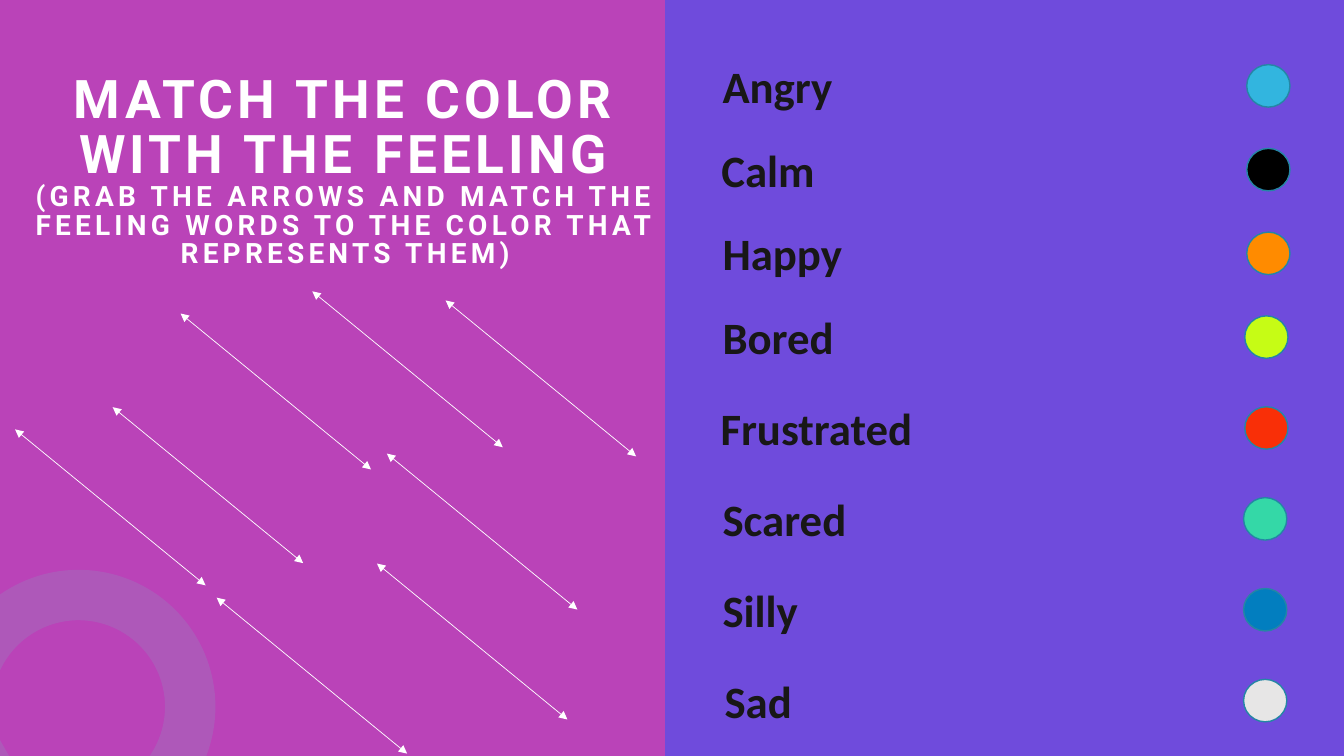
import math
from lxml import etree
from pptx import Presentation, util as u
from pptx.dml.color import RGBColor
from pptx.enum import shapes, text
from pptx.oxml.ns import qn

PURPLE = RGBColor(0x6F, 0x4B, 0xDC)
MAGENTA = RGBColor(0xCD, 0x41, 0xB0)
SKY = RGBColor(0x32, 0xB5, 0xDF)
TEAL = RGBColor(0x25, 0x86, 0xA5)
INK = RGBColor(0x18, 0x17, 0x17)
WHITE = RGBColor(0xFF, 0xFF, 0xFF)
BLACK = RGBColor(0x00, 0x00, 0x00)
ORANGE = RGBColor(0xFF, 0x8B, 0x00)
LIME = RGBColor(0xC6, 0xFC, 0x15)
RED = RGBColor(0xF9, 0x2F, 0x07)
MINT = RGBColor(0x34, 0xD8, 0xA7)
BLUE = RGBColor(0x02, 0x7E, 0xBF)
GREY = RGBColor(0xE7, 0xE6, 0xE6)

TITLE = [
    ("MATCH THE COLOR WITH THE FEELING", 38),
    ("(GRAB THE ARROWS AND MATCH THE FEELING WORDS TO THE COLOR THAT REPRESENTS THEM)", 20),
]
FEELINGS = [
    ("Angry", 17.96, 3.89, SKY, 31.42),
    ("Calm", 17.93, 3.33, BLACK, 31.42),
    ("Happy", 17.96, 4.17, ORANGE, 31.42),
    ("Bored", 17.96, 3.86, LIME, 31.37),
    ("Frustrated", 17.91, 6.15, RED, 31.37),
    ("Scared", 17.96, 4.27, MINT, 31.34),
    ("Silly", 17.96, 2.84, BLUE, 31.34),
    ("Sad", 18.01, 2.59, GREY, 31.34),
]
ARROW_STARTS = [
    (4.55, 7.9), (7.87, 7.34), (2.84, 10.26), (9.5, 14.2),
    (9.75, 11.43), (0.38, 10.82), (5.46, 15.06), (11.23, 7.57),
]
ARROW_RUN, ARROW_DROP = 4.8, 3.93
SLIDE_WIDTH, SLIDE_HEIGHT = 33.87, 19.05
PANEL_WIDTH = 16.76
FIRST_DOT, UPPER_PITCH, LOWER_PITCH, UPPER_STEPS = 1.63, 2.11, 2.29, 3
DOT_WIDTH, DOT_HEIGHT = 1.09, 1.07
LABEL_RISE, LABEL_HEIGHT = 0.28, 1.62
RING_X, RING_Y, RING_OUTER, RING_INNER = 1.98, 17.81, 3.45, 2.18


def visible_arc(radius, steps=60):
    start = math.pi + math.acos(RING_X / radius)
    end = 2 * math.pi + math.asin((SLIDE_HEIGHT - RING_Y) / radius)
    angles = [start + (end - start) * step / steps for step in range(steps + 1)]
    return [(u.Cm(RING_X + radius * math.cos(angle)),
             u.Cm(RING_Y + radius * math.sin(angle))) for angle in angles]


def add_ring(page):
    outline = visible_arc(RING_OUTER) + visible_arc(RING_INNER)[::-1]
    builder = page.shapes.build_freeform(*outline[0])
    builder.add_line_segments(outline[1:], close=True)
    builder.move_to(0, u.Cm(18.65))
    builder.add_line_segments(
        [(u.Cm(0.23), u.Cm(SLIDE_HEIGHT)), (0, u.Cm(SLIDE_HEIGHT))], close=True)
    ring = builder.convert_to_shape()
    ring.shadow.inherit = False
    ring.fill.solid()
    ring.fill.fore_color.rgb = SKY
    ring.line.fill.background()


def add_panel(page):
    panel = page.shapes.add_shape(
        shapes.MSO_SHAPE.RECTANGLE, 0, 0, u.Cm(PANEL_WIDTH), u.Cm(SLIDE_HEIGHT))
    panel.shadow.inherit = False
    panel.fill.solid()
    panel.fill.fore_color.rgb = MAGENTA
    color = panel._element.spPr.find(qn("a:solidFill"))[0]
    etree.SubElement(color, qn("a:alpha")).set("val", "80000")
    panel.line.fill.background()
    frame = panel.text_frame
    frame.word_wrap = True
    frame.vertical_anchor = text.MSO_ANCHOR.TOP
    frame.margin_left, frame.margin_right = u.Cm(0.64), 0
    frame.margin_top, frame.margin_bottom = u.Cm(1.9), u.Cm(0.13)
    para = frame.paragraphs[0]
    para.alignment = text.PP_ALIGN.CENTER
    para.line_spacing = 0.85
    for index, (words, size) in enumerate(TITLE):
        if index:
            para.add_line_break()
        span = para.add_run()
        span.text = words
        style(span, "Roboto", size, WHITE)
        span._r.get_or_add_rPr().set("spc", "300")


def style(span, name, size, color):
    span.font.name = name
    span.font.size = u.Pt(size)
    span.font.bold = True
    span.font.color.rgb = color


def add_feeling(page, index, name, label_left, label_width, color, dot_left):
    top = (FIRST_DOT + UPPER_PITCH * min(index, UPPER_STEPS)
           + LOWER_PITCH * max(index - UPPER_STEPS, 0))
    dot = page.shapes.add_shape(
        shapes.MSO_SHAPE.OVAL, u.Cm(dot_left), u.Cm(top),
        u.Cm(DOT_WIDTH), u.Cm(DOT_HEIGHT))
    dot.shadow.inherit = False
    dot.fill.solid()
    dot.fill.fore_color.rgb = color
    dot.line.color.rgb = TEAL
    dot.line.width = u.Pt(1)
    label = page.shapes.add_textbox(
        u.Cm(label_left), u.Cm(top - LABEL_RISE), u.Cm(label_width), u.Cm(LABEL_HEIGHT))
    frame = label.text_frame
    frame.word_wrap = False
    frame.auto_size = text.MSO_AUTO_SIZE.SHAPE_TO_FIT_TEXT
    frame.text = name
    style(frame.paragraphs[0].runs[0], "Calibri", 32, INK)


def add_arrow(page, left, top):
    arrow = page.shapes.add_connector(
        shapes.MSO_CONNECTOR.STRAIGHT, u.Cm(left), u.Cm(top),
        u.Cm(left + ARROW_RUN), u.Cm(top + ARROW_DROP))
    arrow.line.color.rgb = WHITE
    arrow.line.width = u.Pt(0.5)
    line = arrow.line._get_or_add_ln()
    for end in ("a:headEnd", "a:tailEnd"):
        etree.SubElement(line, qn(end)).set("type", "triangle")
    etree.SubElement(arrow._element.spPr, qn("a:effectLst"))


def main():
    deck = Presentation()
    deck.slide_width, deck.slide_height = u.Cm(SLIDE_WIDTH), u.Cm(SLIDE_HEIGHT)
    page = deck.slides.add_slide(deck.slide_layouts[6])
    page.background.fill.solid()
    page.background.fill.fore_color.rgb = PURPLE
    add_ring(page)
    add_panel(page)
    for index, feeling in enumerate(FEELINGS):
        add_feeling(page, index, *feeling)
    for left, top in ARROW_STARTS:
        add_arrow(page, left, top)
    deck.save("out.pptx")


if __name__ == "__main__":
    main()
